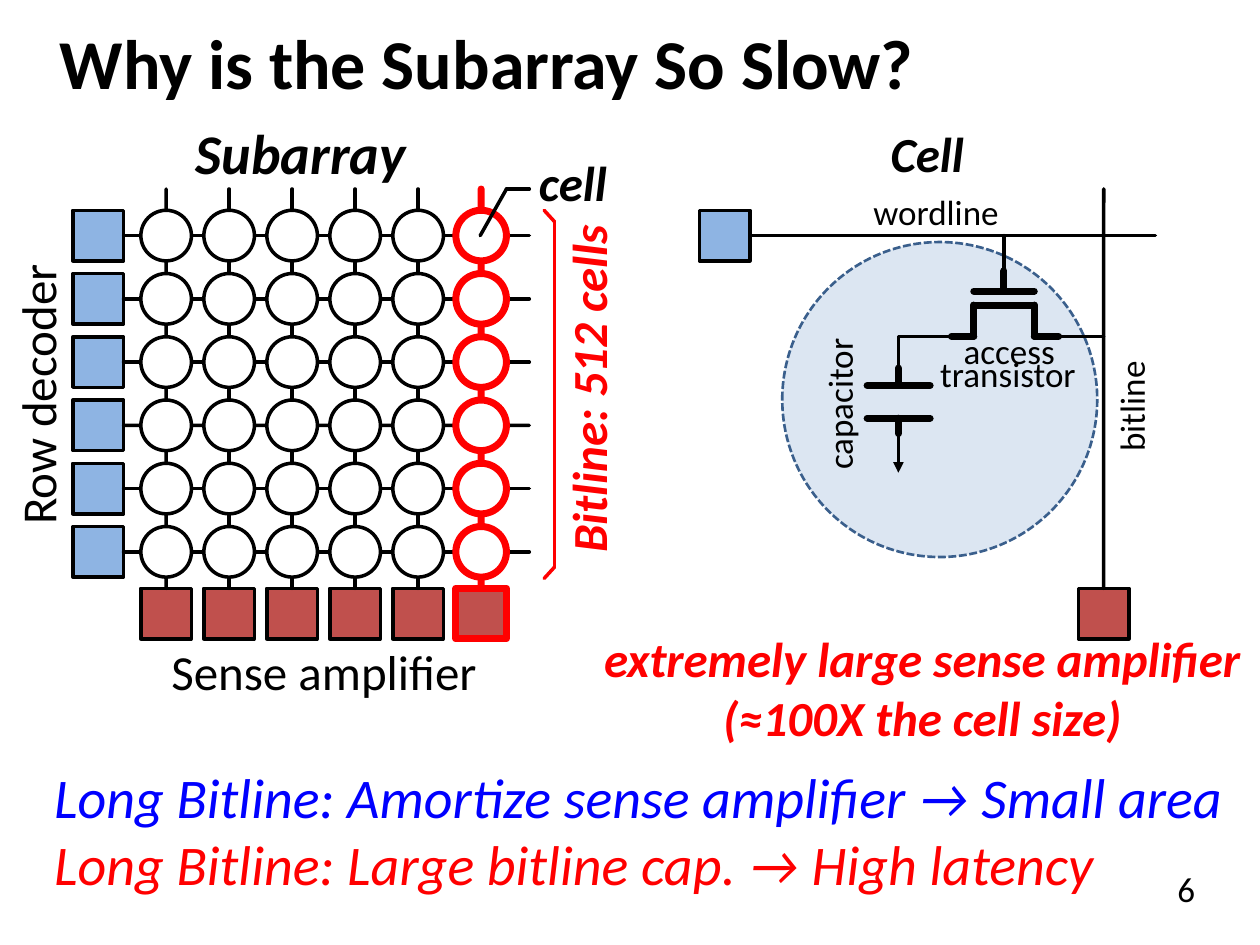
"""Build the slide that explains why a memory subarray is slow."""
import itertools

import lxml.etree
import pptx
import pptx.dml.color
import pptx.enum.dml
import pptx.enum.shapes
import pptx.enum.text
import pptx.oxml.ns
import pptx.util

Cm = pptx.util.Cm
SHAPE = pptx.enum.shapes.MSO_SHAPE
CONNECTOR = pptx.enum.shapes.MSO_CONNECTOR
ALIGN = pptx.enum.text.PP_ALIGN
ANCHOR = pptx.enum.text.MSO_ANCHOR

BLACK, WHITE, RED, BLUE = "000000", "FFFFFF", "FF0000", "0000FF"
DECODER, AMPLIFIER, CELL_AREA, CELL_EDGE = "8EB4E3", "C0504D", "DCE6F2", "3A5F8C"
BOLD_ITALIC = {"bold": True, "italic": True}

UNIT = 1.02
COUNT = 6
COLUMN_PITCH, ROW_PITCH = 1.27, 1.275
FIRST_COLUMN, FIRST_ROW = 2.84, 4.24
DECODER_LEFT, AMPLIFIER_TOP = 1.47, 11.86
BITLINE_TOP, WORDLINE_END = 3.81, 10.67


def color(hex_value):
    """Return the colour for a hex string."""
    return pptx.dml.color.RGBColor.from_string(hex_value)


def add_child(parent, tag, **attributes):
    """Append a DrawingML element to a parent."""
    child = lxml.etree.SubElement(parent, pptx.oxml.ns.qn(tag))
    for key, value in attributes.items():
        child.set(key, value)
    return child


def add_block(slide, kind, left, top, size, fill, edge=BLACK, weight=2):
    """Draw a square or a circle with an outline."""
    block = slide.shapes.add_shape(kind, Cm(left), Cm(top), Cm(size), Cm(size))
    block.shadow.inherit = False
    block.fill.solid()
    block.fill.fore_color.rgb = color(fill)
    block.line.color.rgb = color(edge)
    block.line.width = pptx.util.Pt(weight)
    return block


def add_wire(slide, start, end, edge=BLACK, weight=2, source=None, arrow=False, elbow=False):
    """Draw a wire, joined at its start to a (block, side) source if given."""
    kind = CONNECTOR.ELBOW if elbow else CONNECTOR.STRAIGHT
    wire = slide.shapes.add_connector(kind, *map(Cm, (*start, *end)))
    if source:
        wire.begin_connect(*source)
    wire.line.color.rgb = color(edge)
    wire.line.width = pptx.util.Pt(weight)
    properties = wire._element.spPr
    outline = properties.find(pptx.oxml.ns.qn("a:ln"))
    outline.set("cap", "rnd")
    if arrow:
        add_child(outline, "a:tailEnd", type="triangle")
    if elbow:
        guides = next(properties.iter(pptx.oxml.ns.qn("a:avLst")))
        add_child(guides, "a:gd", name="adj1", fmla="val 100000")
    add_child(properties, "a:effectLst")
    return wire


def add_path(slide, points, edge=BLACK, weight=2):
    """Draw straight wires through a run of points."""
    for start, end in itertools.pairwise(points):
        add_wire(slide, start, end, edge, weight)


def add_label(slide, box, lines, size, align=ALIGN.CENTER, anchor=ANCHOR.MIDDLE,
              margins=(0, 0), rotation=0, **style):
    """Write (text, colour) lines in a box, with left and top margins."""
    label = slide.shapes.add_textbox(*map(Cm, box))
    label.rotation = rotation
    frame = label.text_frame
    left, top = map(Cm, margins)
    layout = {"word_wrap": True, "vertical_anchor": anchor, "margin_left": left,
              "margin_right": 0, "margin_top": top, "margin_bottom": 0}
    for name, value in layout.items():
        setattr(frame, name, value)
    for index, (text, ink) in enumerate(lines):
        paragraph = frame.add_paragraph() if index else frame.paragraphs[0]
        paragraph.alignment = align
        run = paragraph.add_run()
        run.text = text
        run.font.color.rgb = color(ink)
        font_format = {"name": "Calibri", "size": pptx.util.Pt(size), **style}
        for name, value in font_format.items():
            setattr(run.font, name, value)


def add_subarray(slide):
    """Draw the grid of cells with its decoders and sense amplifiers."""
    rows = [FIRST_ROW + ROW_PITCH * i for i in range(COUNT)]
    columns = [FIRST_COLUMN + COLUMN_PITCH * i for i in range(COUNT)]
    for top in rows:
        decoder = add_block(slide, SHAPE.RECTANGLE, DECODER_LEFT, top, UNIT, DECODER)
        middle = top + UNIT / 2
        add_wire(slide, (DECODER_LEFT + UNIT, middle), (WORDLINE_END, middle),
                 source=(decoder, 3))
    for left in columns:
        edge, weight = (RED, 4) if left == columns[-1] else (BLACK, 2)
        amplifier = add_block(slide, SHAPE.RECTANGLE, left, AMPLIFIER_TOP, UNIT,
                              AMPLIFIER, edge, weight)
        center = left + UNIT / 2
        add_wire(slide, (center, AMPLIFIER_TOP), (center, BITLINE_TOP), edge, weight,
                 source=(amplifier, 0))
        for top in rows:
            add_block(slide, SHAPE.OVAL, left, top, UNIT, WHITE, edge, weight)
    add_path(slide, [(10.97, 4.24), (11.18, 4.47), (11.18, 11.43), (10.97, 11.66)], RED)
    add_path(slide, [(WORDLINE_END, BITLINE_TOP), (10.21, BITLINE_TOP), (9.68, 4.75)])
    add_label(slide, (1.47, 2.54, 9.19, 1.07), [("Subarray", BLACK)], 32, **BOLD_ITALIC)
    add_label(slide, (9.96, 3.18, 3.18, 0.99), [("cell", BLACK)], 28, **BOLD_ITALIC)
    add_label(slide, (7.82, 7.19, 8.05, 1.3), [("Bitline: 512 cells", RED)], 28,
              rotation=270, **BOLD_ITALIC)
    add_label(slide, (-2.97, 7.42, 7.42, 1.07), [("Row decoder", BLACK)], 28, rotation=270)
    add_label(slide, (2.57, 12.85, 7.92, 1.35), [("Sense amplifier", BLACK)], 28)


def add_cell(slide):
    """Draw one cell with its transistor, capacitor, wordline and bitline."""
    area = add_block(slide, SHAPE.OVAL, 15.77, 4.88, 6.35, CELL_AREA, CELL_EDGE, 1.5)
    area.line.dash_style = pptx.enum.dml.MSO_LINE.SQUARE_DOT
    decoder = add_block(slide, SHAPE.RECTANGLE, 14.1, FIRST_ROW, UNIT, DECODER)
    amplifier = add_block(slide, SHAPE.RECTANGLE, 21.74, AMPLIFIER_TOP, UNIT, AMPLIFIER)
    wordline_y, bitline_x = 4.75, 22.25
    add_wire(slide, (15.12, wordline_y), (23.29, wordline_y), source=(decoder, 3))
    add_wire(slide, (bitline_x, AMPLIFIER_TOP), (bitline_x, BITLINE_TOP),
             source=(amplifier, 0))

    gate_x, source_x, drain_x = 20.24, 19.63, 20.85
    channel_y, contact_y = 6.15, 6.78
    add_wire(slide, (gate_x, wordline_y), (gate_x, 5.54))
    add_wire(slide, (gate_x, 5.84), (gate_x, 5.46), weight=4)
    add_wire(slide, (drain_x, 5.87), (source_x, 5.87), weight=4)
    add_path(slide, [(19.18, contact_y), (source_x, contact_y), (source_x, channel_y),
                     (drain_x, channel_y), (drain_x, contact_y), (21.34, contact_y)],
             weight=4)
    add_wire(slide, (bitline_x, contact_y), (21.34, contact_y))

    capacitor_x = 18.11
    add_wire(slide, (19.18, contact_y), (capacitor_x, 7.42), elbow=True)
    add_wire(slide, (capacitor_x, 8.74), (capacitor_x, 9.53), arrow=True)
    for plate_y, lead_y in ((7.77, 7.42), (8.43, 8.74)):
        add_wire(slide, (18.75, plate_y), (17.48, plate_y), weight=4)
        add_wire(slide, (capacitor_x, plate_y), (capacitor_x, lead_y), weight=4)

    for text, box, rotation in (
        ("capacitor", (15.32, 7.65, 3.18, 0.99), 270),
        ("access", (18.54, 6.55, 3.61, 1.04), 0),
        ("transistor", (18.54, 6.93, 3.56, 1.19), 0),
        ("wordline", (16, 3.81, 5.74, 0.91), 0),
        ("bitline", (20.42, 7.7, 4.75, 0.99), 270),
    ):
        add_label(slide, box, [(text, BLACK)], 20, rotation=rotation)
    add_label(slide, (14.1, 2.54, 9.19, 1.07), [("Cell", BLACK)], 28, **BOLD_ITALIC)
    add_label(slide, (11.86, 12.9, 13.46, 1.9),
              [("extremely large sense amplifier", RED), ("(≈100X the cell size)", RED)],
              28, **BOLD_ITALIC)


def main():
    """Build and save the presentation."""
    presentation = pptx.Presentation()
    presentation.slide_width, presentation.slide_height = Cm(25.4), Cm(19.05)
    slide = presentation.slides.add_slide(presentation.slide_layouts[6])
    add_label(slide, (0, 0, 25.4, 2.34), [("Why is the Subarray So Slow?", BLACK)], 40,
              align=ALIGN.LEFT, margins=(1.21, 0.13), bold=True)
    add_subarray(slide)
    add_cell(slide)
    add_label(slide, (0.84, 15.24, 24.33, 3),
              [("Long Bitline: Amortize sense amplifier → Small area", BLUE),
               ("Long Bitline: Large bitline cap. → High latency", RED)],
              32, align=ALIGN.LEFT, anchor=ANCHOR.TOP, margins=(0.25, 0.13), italic=True)
    add_label(slide, (22.43, 17.35, 2.97, 1.7), [("6", BLACK)], 20,
              anchor=ANCHOR.TOP, margins=(0, 0.13))
    presentation.save("out.pptx")


if __name__ == "__main__":
    main()
